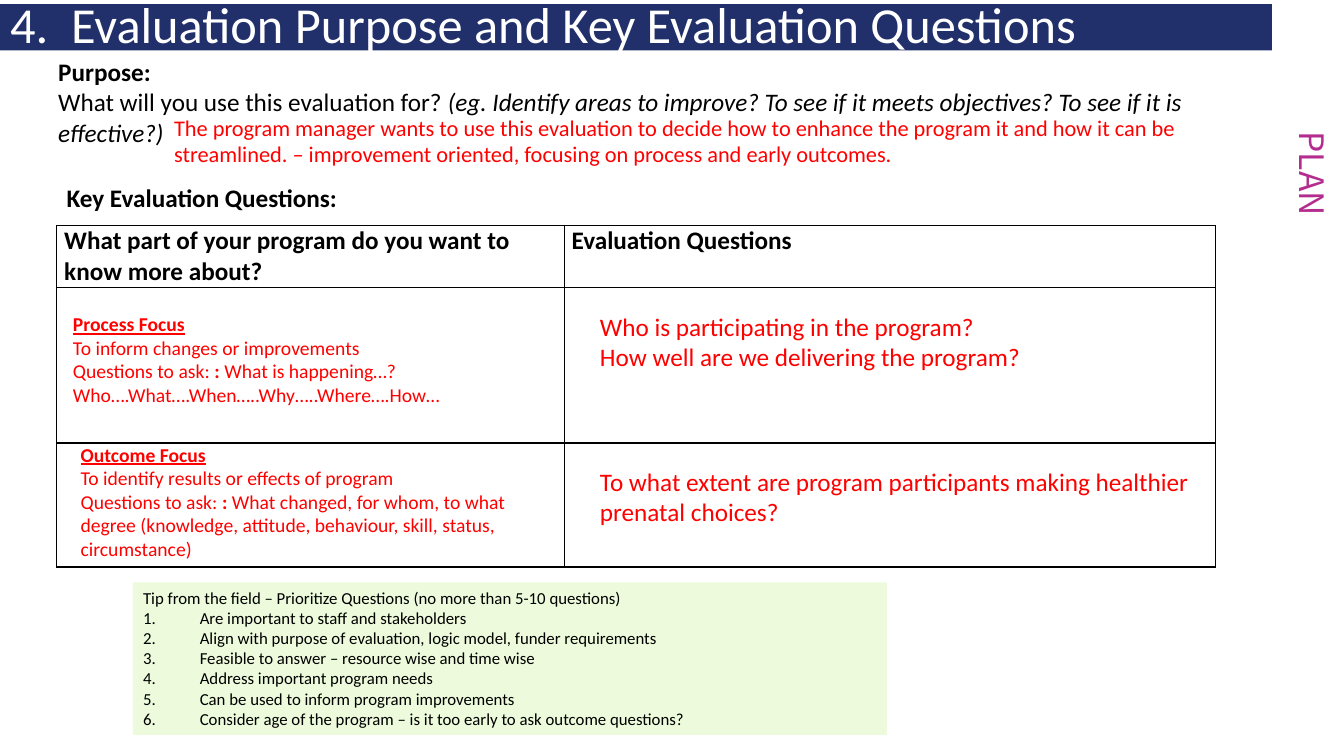
from dataclasses import dataclass
from typing import NamedTuple

import pptx
import pptx.dml.color
import pptx.enum.text
import pptx.oxml
import pptx.oxml.ns
import pptx.util
from lxml import etree

Pt = pptx.util.Pt
ANCHOR = pptx.enum.text.MSO_ANCHOR
ALIGN = pptx.enum.text.PP_ALIGN


@dataclass(frozen=True)
class Theme:
    font: str = "Calibri"
    tab_font: str = "Noto Sans CJK TC"
    ink: str = "000000"
    paper: str = "FFFFFF"
    navy: str = "21306A"
    answer: str = "FF0000"
    magenta: str = "B42D8E"
    mint: str = "EDFBDC"
    title_size: int = 36
    tab_size: int = 24
    body_size: int = 18
    answer_size: int = 16
    focus_size: int = 14
    tip_size: int = 12


THEME = Theme()


class Box(NamedTuple):
    left: float
    top: float
    width: float
    height: float

    def inner(self, dx, dy, width, height):
        return Box(self.left + dx, self.top + dy, width, height)

    def lengths(self):
        return [Pt(value) for value in self]


def rgb(code):
    return pptx.dml.color.RGBColor.from_string(code)


def fill(part, color):
    part.fill.solid()
    part.fill.fore_color.rgb = rgb(color)


def write(frame, paragraphs, size=THEME.body_size, color=THEME.ink, font=THEME.font,
          align=ALIGN.LEFT, anchor=ANCHOR.TOP, line_spacing=None, numbered_from=None):
    """Each paragraph is a string or a list of (text, font attributes) runs."""
    frame.word_wrap = True
    frame.vertical_anchor = anchor
    for index, runs in enumerate(paragraphs):
        paragraph = frame.paragraphs[0] if index == 0 else frame.add_paragraph()
        if numbered_from is not None:
            set_numbering(paragraph, index >= numbered_from)
        paragraph.alignment = align
        paragraph.space_before = Pt(0)
        if line_spacing:
            paragraph.line_spacing = line_spacing
        for text, style in [(runs, {})] if isinstance(runs, str) else runs:
            run = paragraph.add_run()
            run.text = text
            run.font.name = font
            run.font.size = Pt(size)
            run.font.color.rgb = rgb(color)
            for attribute, value in style.items():
                setattr(run.font, attribute, value)


def set_numbering(paragraph, numbered):
    properties = paragraph._p.get_or_add_pPr()
    indent = Pt(40.5) if numbered else 0
    properties.set("marL", str(indent))
    properties.set("indent", str(-indent))
    if numbered:
        etree.SubElement(properties, pptx.oxml.ns.qn("a:buFont"), typeface="+mj-lt")
        etree.SubElement(properties, pptx.oxml.ns.qn("a:buAutoNum"), type="arabicPeriod")
    else:
        etree.SubElement(properties, pptx.oxml.ns.qn("a:buNone"))


def place(placeholder, box, color):
    placeholder.left, placeholder.top, placeholder.width, placeholder.height = box.lengths()
    placeholder.text_frame.auto_size = pptx.enum.text.MSO_AUTO_SIZE.NONE
    fill(placeholder, color)
    return placeholder.text_frame


def add_note(slide, box, paragraphs, **style):
    write(slide.shapes.add_textbox(*box.lengths()).text_frame, paragraphs, **style)


def add_title(slide, box):
    write(place(slide.shapes.title, box, THEME.navy),
          ["4.\u2002Evaluation Purpose and Key Evaluation Questions".replace("\u2002", "  ")],
          size=THEME.title_size, color=THEME.paper, anchor=ANCHOR.MIDDLE, line_spacing=0.9)


def add_stage_tab(slide, box):
    """Sideways label of the planning stage at the right edge."""
    tab = slide.shapes.add_shape(pptx.enum.shapes.MSO_SHAPE.RECTANGLE, *box.lengths())
    tab.rotation = 90
    tab.shadow.inherit = False
    tab.line.fill.background()
    fill(tab, THEME.paper)
    write(tab.text_frame, ["PLAN"], size=THEME.tab_size, color=THEME.magenta,
          font=THEME.tab_font, align=ALIGN.CENTER)


def add_purpose(slide, box):
    add_note(slide, box, [
        [("Purpose:", {"bold": True})],
        [("What will you use this evaluation for? ", {}),
         ("(eg. Identify areas to improve? To see if it meets objectives? "
          "To see if it is effective?)", {"italic": True})],
    ])
    add_note(slide, box.inner(82.8, 41, 751, 46), [
        "The program manager wants to use this evaluation to decide how to enhance the program "
        "it and how it can be streamlined. – improvement oriented, focusing on process and "
        "early outcomes."], size=THEME.answer_size, color=THEME.answer)


def border(cell):
    properties = cell._tc.get_or_add_tcPr()
    for position, side in enumerate(("lnL", "lnR", "lnT", "lnB")):
        properties.insert(position, pptx.oxml.parse_xml(
            f'<a:{side} {pptx.oxml.ns.nsdecls("a")} w="{Pt(1)}"><a:solidFill>'
            f'<a:srgbClr val="{THEME.ink}"/></a:solidFill></a:{side}>'))


def add_question_table(slide, box):
    add_note(slide, box.inner(0, -34, 480, 29),
             [[("Key Evaluation Questions:", {"bold": True})]])
    table = slide.shapes.add_table(3, 2, *box.lengths()).table
    table.first_row = table.horz_banding = False
    for column, width in zip(table.columns, (362.5, 465.5)):
        column.width = Pt(width)
    for row, height in zip(table.rows, (44.5, 111, 88.5)):
        row.height = Pt(height)
    for cell in table.iter_cells():
        fill(cell, THEME.paper)
        border(cell)
        cell.margin_left = cell.margin_right = Pt(5.4)
        cell.margin_top = cell.margin_bottom = 0
    headings = ("What part of your program do you want to know more about?",
                "Evaluation Questions")
    for column, heading in enumerate(headings):
        write(table.cell(0, column).text_frame, [[(heading, {"bold": True})]])


def add_focus(slide, box, heading, aim, prompt):
    add_note(slide, box, [
        [(heading, {"bold": True, "underline": True})],
        aim,
        [("Questions to ask: ", {}), (": ", {"bold": True}), (prompt, {})],
    ], size=THEME.focus_size, color=THEME.answer)


def add_answers(slide, box):
    """Sample answers lying over the empty cells of the question table."""
    add_focus(slide, box.inner(4.5, 58.5, 320, 75), "Process Focus",
              "To inform changes or improvements",
              "What is happening…? Who….What….When…..Why…..Where….How…")
    add_focus(slide, box.inner(10, 151.5, 332, 114), "Outcome Focus",
              "To identify results or effects of program",
              "What changed, for whom, to what degree (knowledge, attitude, behaviour, skill, "
              "status, circumstance)")
    questions = (
        (57.5, ["Who is participating in the program?",
                "How well are we delivering the program?"]),
        (168.5, ["To what extent are program participants making healthier prenatal choices?"]),
    )
    for offset, lines in questions:
        add_note(slide, box.inner(381, offset, 487.5, 51), lines, color=THEME.answer)


def add_tips(slide, box):
    write(place(slide.placeholders[1], box, THEME.mint), [
        "Tip from the field – Prioritize Questions (no more than 5-10 questions)",
        "Are important to staff and stakeholders",
        "Align with purpose of evaluation, logic model, funder requirements",
        "Feasible to answer – resource wise and time wise",
        "Address important program needs",
        "Can be used to inform program improvements",
        "Consider age of the program – is it too early to ask outcome questions?",
    ], size=THEME.tip_size, numbered_from=1)


def main():
    deck = pptx.Presentation()
    deck.slide_width, deck.slide_height = Pt(960), Pt(540)
    slide = deck.slides.add_slide(deck.slide_layouts[1])
    questions = Box(40.5, 161, 828, 244)
    add_stage_tab(slide, Box(842.5, 106, 191, 36))
    add_purpose(slide, Box(34.5, 36.7, 844.5, 73))
    add_question_table(slide, questions)
    add_title(slide, Box(0, 3, 908.5, 33))
    add_answers(slide, questions)
    add_tips(slide, Box(95, 416, 538.5, 109))
    deck.save("out.pptx")


if __name__ == "__main__":
    main()
